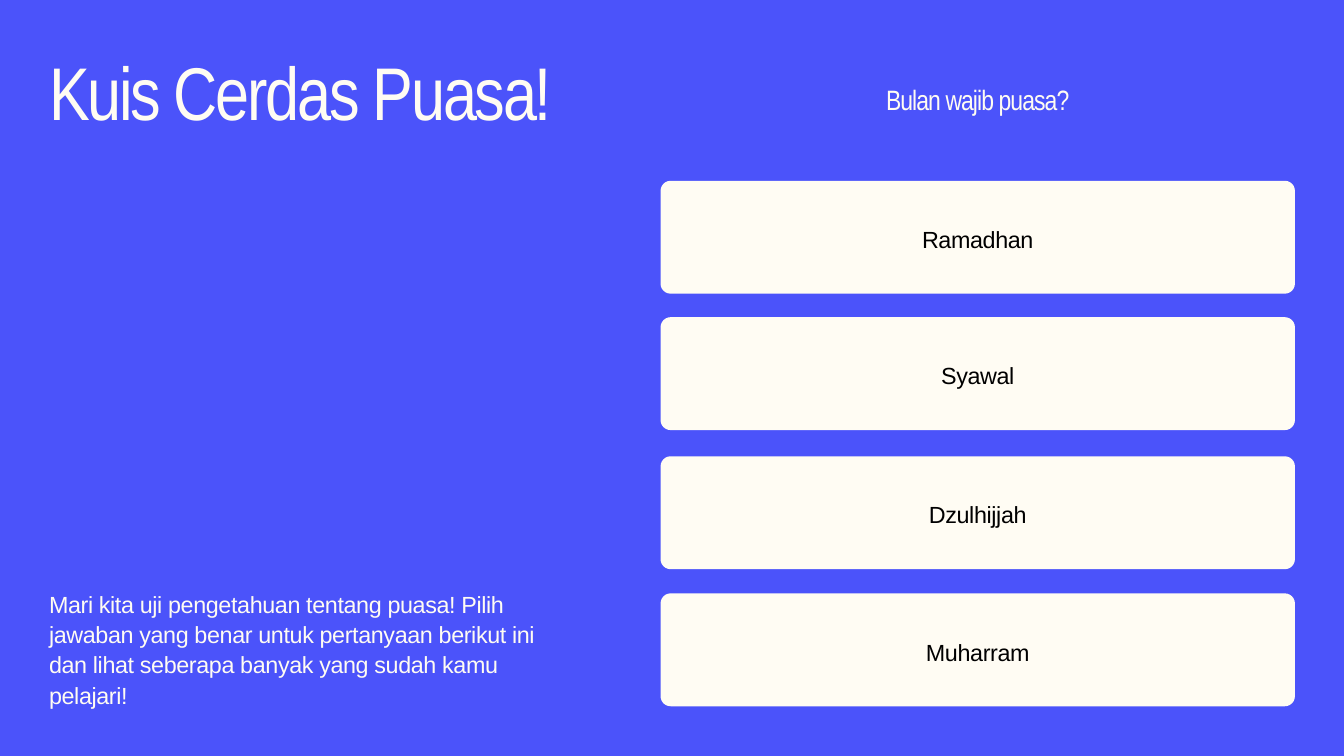
from pptx import Presentation
from pptx.dml.color import RGBColor
from pptx.enum.shapes import MSO_SHAPE as Shape
from pptx.enum.text import PP_ALIGN as Align
from pptx.util import Inches, Pt

BLUE, CREAM, BLACK = "4B53FA", "FFFCF3", "000000"
BODY_FONT, HEADING_FONT = "Arial", "Arial Narrow"
ANSWERS = ["Ramadhan", "Syawal", "Dzulhijjah", "Muharram"]
CARD_OFFSETS = [1.51, 3.54, 5.61, 7.65]
CARD_HEIGHT, CARD_RADIUS = 1.68, 0.15


def paint(fill, color):
    fill.solid()
    fill.fore_color.rgb = RGBColor.from_string(color)


def add_text(page, box, text, size, leading, tracking,
             font=BODY_FONT, color=CREAM, align=Align.LEFT):
    """Leading and tracking are in points; box is left, top, width, height."""
    frame = page.shapes.add_textbox(*map(Inches, box)).text_frame
    frame.word_wrap = True
    frame.margin_left = frame.margin_right = 0
    frame.margin_top = frame.margin_bottom = 0
    para = frame.paragraphs[0]
    para.alignment = align
    para.line_spacing = Pt(leading)
    para.font.name = font
    para.font.size = Pt(size)
    para.font.color.rgb = RGBColor.from_string(color)
    span = para.add_run()
    span.text = text
    span._r.get_or_add_rPr().set("spc", str(round(tracking * 100)))


def add_introduction(page, left, top, width):
    add_text(page, (left, top, width, 2.48), "Kuis Cerdas Puasa!",
             80, 88, -2.4, font=HEADING_FONT)
    add_text(page, (left, top + 7.94, width, 1.78),
             "Mari kita uji pengetahuan tentang puasa! Pilih jawaban yang "
             "benar untuk pertanyaan berikut ini dan lihat seberapa banyak "
             "yang sudah kamu pelajari!", 25, 32.5, -0.4)


def add_answer(page, left, top, width, answer):
    card = page.shapes.add_shape(
        Shape.ROUNDED_RECTANGLE,
        *map(Inches, (left, top, width, CARD_HEIGHT)))
    card.adjustments[0] = CARD_RADIUS / CARD_HEIGHT
    card.shadow.inherit = False
    card.line.fill.background()
    paint(card.fill, CREAM)
    add_text(page, (left + 0.72, top + 0.59, width - 1.44, 0.45), answer,
             25, 35, -0.4, color=BLACK, align=Align.CENTER)


def add_question(page, left, top, width):
    add_text(page, (left, top, width, 0.53), "Bulan wajib puasa?",
             30, 39, -1, font=HEADING_FONT, align=Align.CENTER)
    for answer, offset in zip(ANSWERS, CARD_OFFSETS):
        add_answer(page, left, top + offset, width, answer)


def main():
    deck = Presentation()
    deck.slide_width, deck.slide_height = Inches(20), Inches(11.25)
    page = deck.slides.add_slide(deck.slide_layouts[6])
    paint(page.background.fill, BLUE)
    add_introduction(page, 0.73, 0.8, 7.53)
    add_question(page, 9.83, 1.18, 9.44)
    deck.save("out.pptx")


if __name__ == "__main__":
    main()
